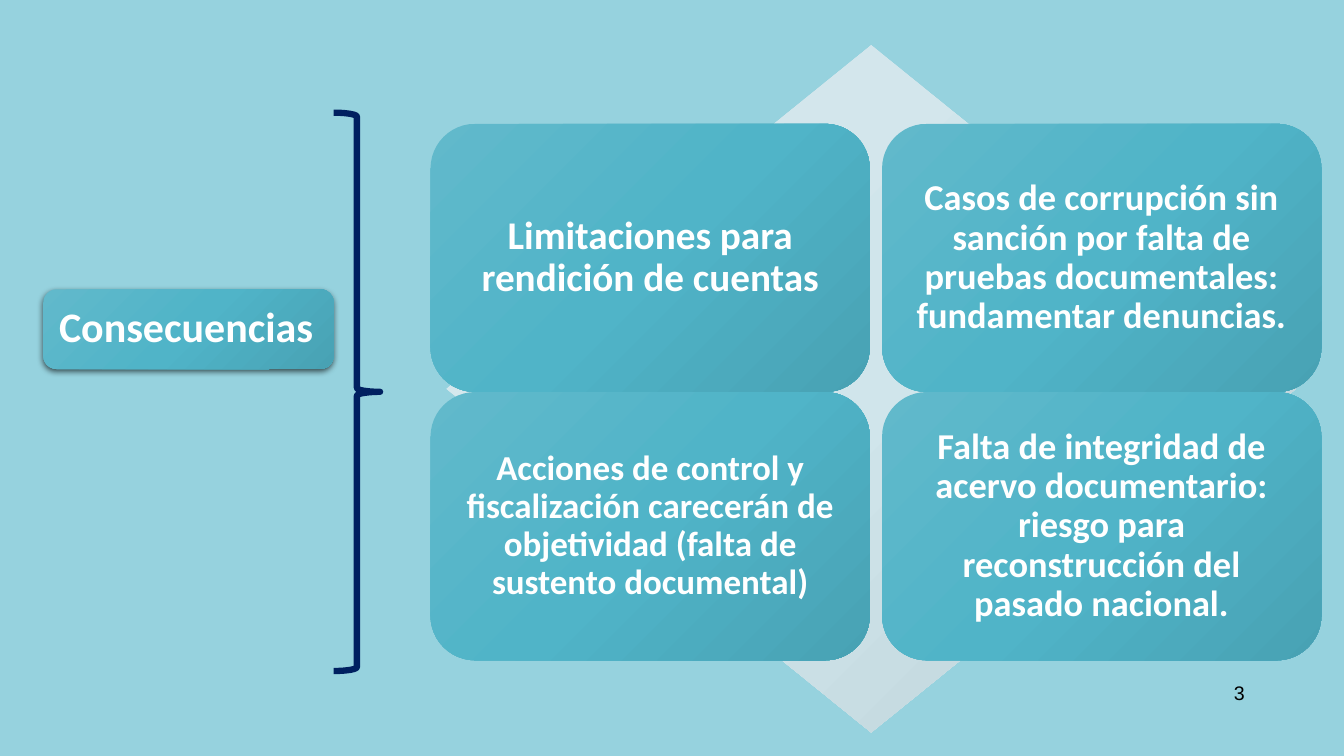
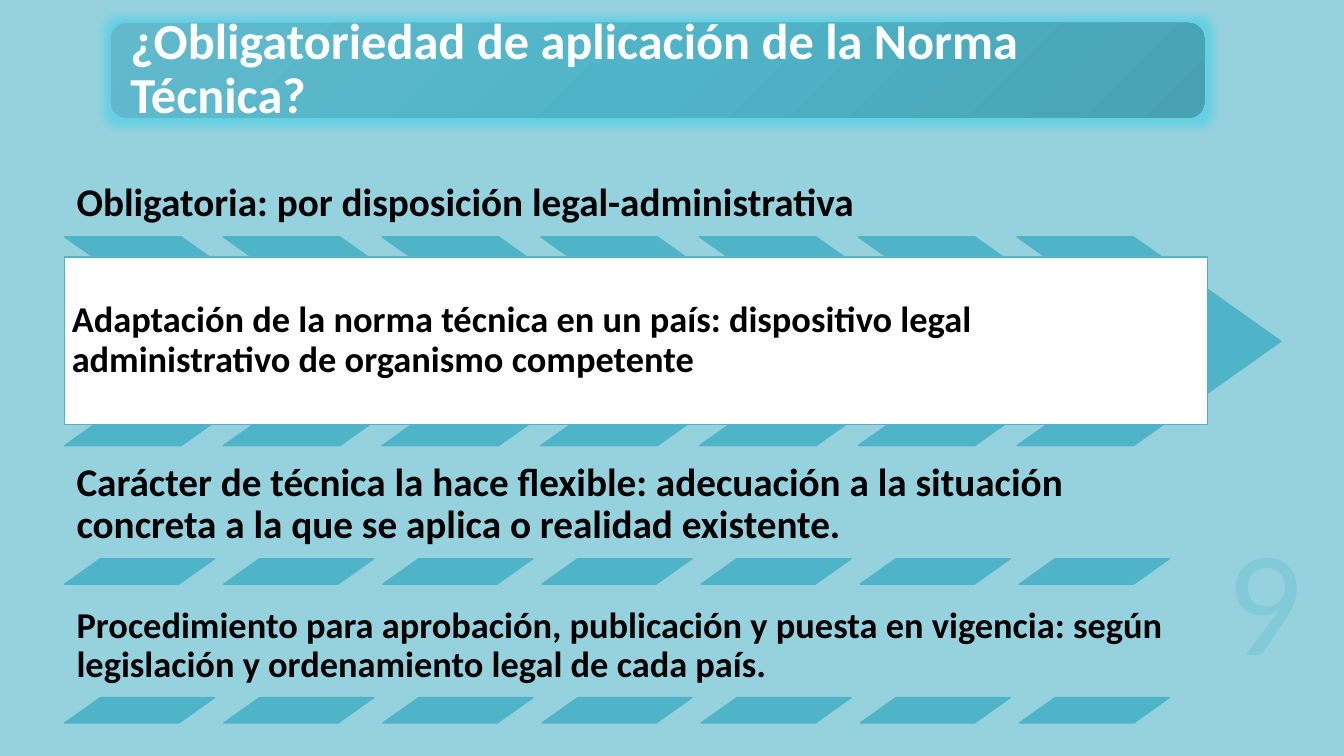
import copy
import dataclasses

import lxml.etree
import pptx
import pptx.dml.color
import pptx.enum.shapes
import pptx.enum.text
import pptx.oxml
import pptx.oxml.ns
import pptx.util

Cm = pptx.util.Cm
Pt = pptx.util.Pt
Shape = pptx.enum.shapes.MSO_SHAPE
Align = pptx.enum.text.PP_ALIGN
Anchor = pptx.enum.text.MSO_ANCHOR


@dataclasses.dataclass(frozen=True)
class Theme:
    background: str = "96D2DE"
    accent: str = "50B4C8"
    navy: str = "002060"
    white: str = "FFFFFF"
    black: str = "000000"
    faint: str = "82CAD8"
    teal: tuple = ("61B9CB", "50B4C8", "48A2B4")
    pale: tuple = ("D8E9EE", "D0E5EB", "BBCED4")
    font: str = "Calibri"
    number_font: str = "Arial"
    title_size: int = 36
    label_size: int = 30
    large_size: int = 28
    medium_size: int = 26
    small_size: int = 25
    number_size: int = 14
    big_number_size: int = 107


theme = Theme()
rgb = pptx.dml.color.RGBColor.from_string


def add_figure(page, kind, place, fill=None, line=None, line_width=1, effect=None):
    """Add a preset shape; a tuple of colours as fill makes a diagonal gradient."""
    shape = page.shapes.add_shape(kind, *[Cm(length) for length in place])
    shape.shadow.inherit = False
    if isinstance(fill, tuple):
        shape.fill.gradient()
        shape.fill.gradient_angle = 315
        stop_list = shape._element.spPr.find(".//" + pptx.oxml.ns.qn("a:gsLst"))
        stop_list.append(copy.deepcopy(stop_list[0]))
        for stop, colour, position in zip(shape.fill.gradient_stops, fill, (0, 0.5, 1)):
            stop.color.rgb = rgb(colour)
            stop.position = position
    elif fill:
        shape.fill.solid()
        shape.fill.fore_color.rgb = rgb(fill)
    else:
        shape.fill.background()
    if line:
        shape.line.color.rgb = rgb(line)
        shape.line.width = Pt(line_width)
    else:
        shape.line.fill.background()
    if effect:
        effects = shape._element.spPr.find(pptx.oxml.ns.qn("a:effectLst"))
        effects.append(lxml.etree.fromstring(effect))
    return shape


def write_text(box, text, size, colour, align=Align.LEFT, anchor=Anchor.MIDDLE,
               inset=0.3, font=theme.font, bold=True, spacing=0.9):
    """Fill a shape or text box with one styled paragraph."""
    frame = box.text_frame
    frame.word_wrap = True
    frame.vertical_anchor = anchor
    frame.margin_left = frame.margin_right = Cm(inset)
    frame.margin_top = frame.margin_bottom = Cm(inset)
    para = frame.paragraphs[0]
    para.text = text
    para.alignment = align
    para.line_spacing = spacing
    para.font.name = font
    para.font.size = Pt(size)
    para.font.bold = bold
    para.font.color.rgb = rgb(colour)


# Effects
namespace = pptx.oxml.ns.nsdecls("a")
label_shadow = (
    f'<a:outerShdw {namespace} blurRad="{Pt(4.5)}" dist="{Pt(1.5)}" dir="5400000" rotWithShape="0">'
    f'<a:srgbClr val="{theme.black}"><a:alpha val="63000"/></a:srgbClr></a:outerShdw>'
)
title_glow = (
    f'<a:glow {namespace} rad="{Pt(11)}">'
    '<a:srgbClr val="45D0E8"><a:alpha val="60000"/></a:srgbClr></a:glow>'
)

# Deck
deck = pptx.Presentation()
deck.slide_width = Cm(33.87)
deck.slide_height = Cm(19.05)
pages = []
for _ in range(2):
    page = deck.slides.add_slide(deck.slide_layouts[6])
    page.background.fill.solid()
    page.background.fill.fore_color.rgb = rgb(theme.background)
    pages.append(page)
consequences, obligation = pages

# Consequences: diamond with a two by two grid of cards
add_figure(consequences, Shape.DIAMOND, (11.25, 1.14, 21.41, 17.32), theme.pale)
cards = [
    ("Limitaciones para rendición de cuentas", theme.large_size),
    ("Casos de corrupción sin sanción por falta de pruebas documentales: "
     "fundamentar denuncias.", theme.medium_size),
    ("Acciones de control y fiscalización carecerán de objetividad "
     "(falta de sustento documental)", theme.small_size),
    ("Falta de integridad de acervo documentario: riesgo para "
     "reconstrucción del pasado nacional.", theme.medium_size),
]
card_width, card_height, card_gap = 11.07, 6.76, 0.31
for index, (text, size) in enumerate(cards):
    row, column = divmod(index, 2)
    left = 10.85 + column * (card_width + card_gap)
    top = 3.12 + row * card_height
    card = add_figure(consequences, Shape.ROUNDED_RECTANGLE,
                      (left, top, card_width, card_height), theme.teal)
    write_text(card, text, size, theme.white, Align.CENTER, inset=0.28)

# Consequences: label, brace and page number
label = add_figure(consequences, Shape.ROUNDED_RECTANGLE, (1.09, 7.29, 7.32, 2.01),
                   theme.teal, effect=label_shadow)
write_text(label, "Consecuencias", theme.label_size, theme.white)
add_figure(consequences, Shape.RIGHT_BRACE, (8.41, 2.84, 1.17, 14.07),
           line=theme.navy, line_width=4.5)
number = consequences.shapes.add_textbox(Cm(23.95), Cm(16.92), Cm(7.62), Cm(1.02))
write_text(number, "3", theme.number_size, theme.black, Align.RIGHT, Anchor.BOTTOM,
           inset=0.2, font=theme.number_font, bold=False, spacing=1)

# Obligation: title
title = add_figure(obligation, Shape.ROUNDED_RECTANGLE, (2.79, 0.58, 27.56, 2.39),
                   theme.teal, effect=title_glow)
write_text(title, "¿Obligatoriedad de aplicación de la Norma Técnica?",
           theme.title_size, theme.white, inset=0.38)

# Obligation: statements, each above a strip of seven shapes
row_left, row_width, row_height, strip_count = 1.63, 28.42, 2.59, 7
chevron = (Shape.CHEVRON, 0.706, 4.0, 6.65, 5.26)
slant = (Shape.PARALLELOGRAM, 1.408, 4.01, 3.78, 0.64)
statements = [
    (3.38, "Obligatoria: por disposición legal-administrativa", theme.large_size, chevron),
    (11.49, "Carácter de técnica la hace flexible: adecuación a la situación concreta "
     "a la que se aplica o realidad existente.", theme.large_size, slant),
    (14.99, "Procedimiento para aprobación, publicación y puesta en vigencia: según "
     "legislación y ordenamiento legal de cada país.", theme.medium_size, slant),
]
for top, text, size, (kind, adjustment, step, width, height) in statements:
    statement = obligation.shapes.add_textbox(Cm(row_left), Cm(top), Cm(row_width), Cm(row_height))
    write_text(statement, text, size, theme.black, anchor=Anchor.BOTTOM)
    for index in range(strip_count):
        mark = add_figure(obligation, kind,
                          (row_left + index * step, top + row_height, width, height),
                          theme.accent, theme.accent)
        mark.adjustments[0] = adjustment

# Obligation: white panel over the chevrons
panel = add_figure(obligation, Shape.RECTANGLE, (row_left, 6.48, 28.8, 4.22),
                   theme.white, theme.accent)
write_text(panel, "Adaptación de la norma técnica en un país: dispositivo legal "
           "administrativo de organismo competente", theme.medium_size, theme.black, inset=0.18)

# Obligation: large page number
number = obligation.shapes.add_textbox(Cm(30.9), Cm(12.74), Cm(2.2), Cm(4.6))
write_text(number, "9", theme.big_number_size, theme.faint, anchor=Anchor.TOP,
           inset=0, bold=False, spacing=1)

deck.save("out.pptx")
